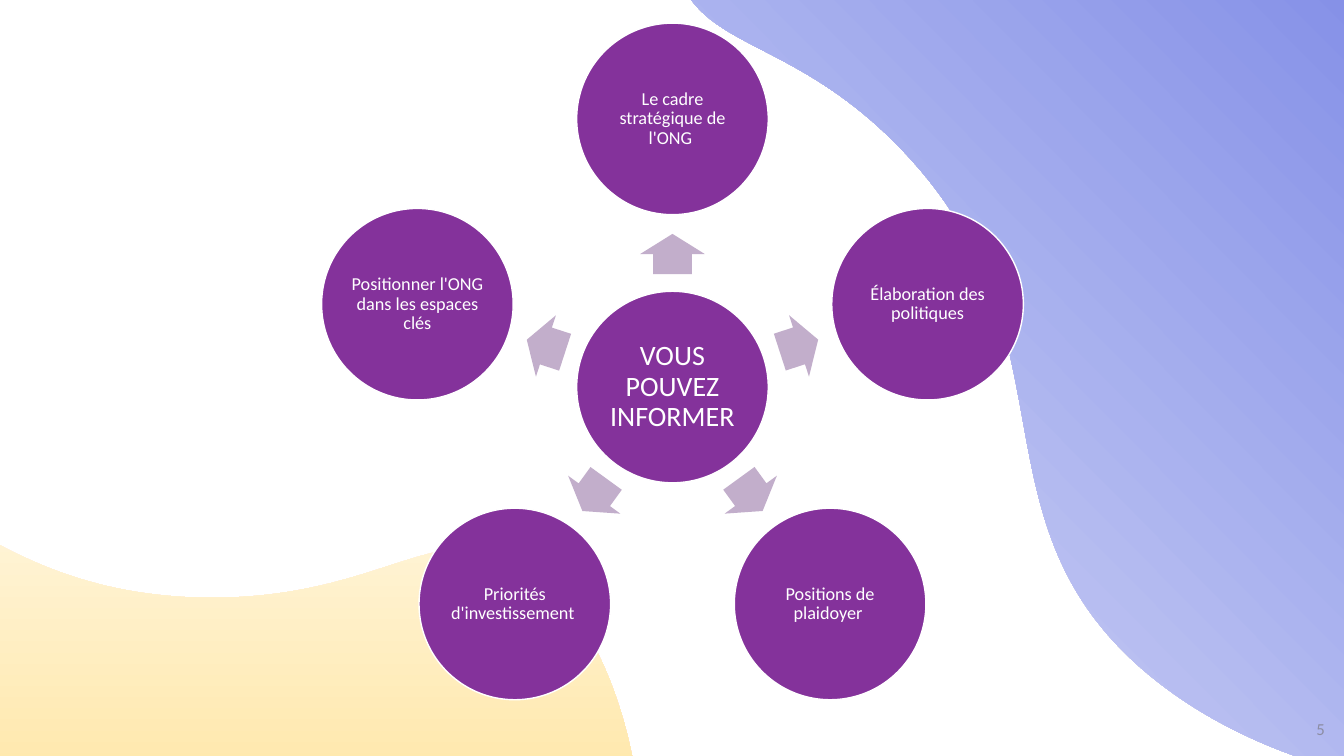
from math import cos, radians, sin
from typing import NamedTuple

from lxml.etree import SubElement
from pptx import Presentation
from pptx.dml.color import RGBColor
from pptx.enum.shapes import MSO_SHAPE as Preset
from pptx.enum.text import MSO_ANCHOR as Anchor, PP_ALIGN as Align
from pptx.oxml.ns import qn
from pptx.util import Emu, Pt

EMU_PER_PX = 9144
FONT = "Calibri"
PURPLE, LILAC, WHITE, GREY = "84329B", "C2AECB", "FFFFFF", "8C8DA3"

CENTER_X, CENTER_Y = 667, 384
DIAMETER = 190
TOPIC_DISTANCE, ARROW_DISTANCE = 266, 132
ARROW_WIDTH, ARROW_HEIGHT = 40, 64

Point = tuple[float, float]


class Blob(NamedTuple):
    left: int
    top: int
    width: int
    height: int
    rotation: float
    start: Point
    curves: list[tuple[Point, Point, Point]]
    stops: list[tuple[int, str]]


class Circle(NamedTuple):
    text: str
    x: float
    y: float
    size: int
    inset: int


BLOBS = [
    Blob(
        -836, 382, 1473, 822, 0,
        (515, 558),
        [
            ((661, 641), (695, 1023), (515, 1155)),
            ((373, 1258), (150, 1171), (108, 1155)),
            ((-37, 1099), (-29, 1036), (-136, 1011)),
            ((-338, 965), (-446, 1168), (-616, 1122)),
            ((-742, 1087), (-834, 935), (-836, 805)),
            ((-838, 575), (-560, 377), (-339, 382)),
            ((-119, 388), (-59, 591), (207, 593)),
            ((377, 594), (433, 512), (515, 558)),
        ],
        [(0, "FFFBF1"), (74, "FFDD83"), (83, "FFDD83"), (100, "FFE8AC")],
    ),
    Blob(
        544, -162, 1356, 757, 225.3,
        (670, -33),
        [
            ((630, -182), (858, -451), (1061, -419)),
            ((1220, -393), (1308, -190), (1324, -152)),
            ((1381, -21), (1335, 14), (1388, 101)),
            ((1489, 263), (1691, 201), (1771, 343)),
            ((1830, 447), (1790, 606), (1706, 691)),
            ((1557, 842), (1248, 788), (1108, 640)),
            ((969, 493), (1063, 322), (892, 146)),
            ((783, 34), (693, 51), (670, -33)),
        ],
        [(0, "EFF1FC"), (74, "707DE3"), (83, "707DE3"), (100, "9FA8ED")],
    ),
]

TOPICS = [
    "Le cadre stratégique de l'ONG ",
    "Élaboration des politiques",
    "Positions de plaidoyer ",
    "Priorités d'investissement ",
    "Positionner l'ONG dans les espaces clés",
]


def px(length: float) -> Emu:
    return Emu(round(length * EMU_PER_PX))


def color(value: str) -> RGBColor:
    return RGBColor.from_string(value)


def inside_box(blob: Blob, point: Point) -> tuple[Emu, Emu]:
    turn = radians(-blob.rotation)
    x = point[0] - blob.left - blob.width / 2
    y = point[1] - blob.top - blob.height / 2
    return (px(x * cos(turn) - y * sin(turn) + blob.width / 2),
            px(x * sin(turn) + y * cos(turn) + blob.height / 2))


def add_path_step(path, tag: str, points: list[tuple[Emu, Emu]]) -> None:
    step = SubElement(path, qn(tag))
    for x, y in points:
        SubElement(step, qn("a:pt"), x=str(x), y=str(y))


def draw_blob(slide, blob: Blob) -> None:
    start = inside_box(blob, blob.start)
    curves = [[inside_box(blob, point) for point in curve] for curve in blob.curves]
    builder = slide.shapes.build_freeform(*start, scale=1.0)
    builder.add_line_segments([curve[-1] for curve in curves], close=True)
    shape = builder.convert_to_shape()
    shape.left, shape.top = px(blob.left), px(blob.top)
    shape.width, shape.height = px(blob.width), px(blob.height)
    shape.rotation = blob.rotation

    properties = shape._element.spPr
    path = properties.find(".//" + qn("a:path"))
    path.clear()
    path.set("w", str(px(blob.width)))
    path.set("h", str(px(blob.height)))
    add_path_step(path, "a:moveTo", [start])
    for curve in curves:
        add_path_step(path, "a:cubicBezTo", curve)
    add_path_step(path, "a:close", [])

    shape.shadow.inherit = False
    shape.line.fill.background()
    shape.fill.gradient()
    shape.fill.gradient_angle = 270
    stop_list = properties.find(".//" + qn("a:gsLst"))
    stop_list.clear()
    for position, value in blob.stops:
        stop = SubElement(stop_list, qn("a:gs"), pos=str(position * 1000))
        SubElement(stop, qn("a:srgbClr"), val=value)


def write(shape, text: str, size: int, value: str, align: Align,
          anchor: Anchor, inset: int) -> None:
    frame = shape.text_frame
    frame.word_wrap = True
    frame.vertical_anchor = anchor
    frame.margin_left = frame.margin_right = px(inset)
    frame.margin_top = frame.margin_bottom = px(inset)
    paragraph = frame.paragraphs[0]
    paragraph.text = text
    paragraph.alignment = align
    paragraph.line_spacing = 0.9
    paragraph.font.name = FONT
    paragraph.font.size = Pt(size)
    paragraph.font.color.rgb = color(value)


def add_centered(slide, preset: Preset, x: float, y: float, width: int,
                 height: int, fill: str):
    shape = slide.shapes.add_shape(
        preset, px(x - width / 2), px(y - height / 2), px(width), px(height))
    shape.shadow.inherit = False
    shape.fill.solid()
    shape.fill.fore_color.rgb = color(fill)
    return shape


def draw_circle(slide, circle: Circle) -> None:
    shape = add_centered(slide, Preset.OVAL, circle.x, circle.y,
                         DIAMETER, DIAMETER, PURPLE)
    shape.line.color.rgb = color(WHITE)
    shape.line.width = Pt(1)
    write(shape, circle.text, circle.size, WHITE, Align.CENTER,
          Anchor.MIDDLE, circle.inset)


def around_center(angle: float, distance: int) -> Point:
    return (CENTER_X + distance * cos(radians(angle)),
            CENTER_Y + distance * sin(radians(angle)))


def draw_arrow(slide, angle: float) -> None:
    x, y = around_center(angle, ARROW_DISTANCE)
    shape = add_centered(slide, Preset.RIGHT_ARROW, x, y,
                         ARROW_WIDTH, ARROW_HEIGHT, LILAC)
    shape.adjustments[0] = 0.6
    shape.adjustments[1] = 0.5
    shape.rotation = angle % 360
    shape.line.fill.background()


def main() -> None:
    presentation = Presentation()
    presentation.slide_width = px(1333)
    presentation.slide_height = px(750)
    slide = presentation.slides.add_slide(presentation.slide_layouts[6])

    for blob in BLOBS:
        draw_blob(slide, blob)

    page_number = slide.shapes.add_textbox(px(1014), px(693), px(300), px(40))
    write(page_number, "5", 12, GREY, Align.RIGHT, Anchor.BOTTOM, 0)

    draw_circle(slide, Circle("VOUS POUVEZ INFORMER", CENTER_X, CENTER_Y, 20, 3))
    for index, topic in enumerate(TOPICS):
        angle = -90 + index * 360 / len(TOPICS)
        draw_arrow(slide, angle)
        draw_circle(slide, Circle(topic, *around_center(angle, TOPIC_DISTANCE), 13, 2))

    presentation.save("out.pptx")


if __name__ == "__main__":
    main()
